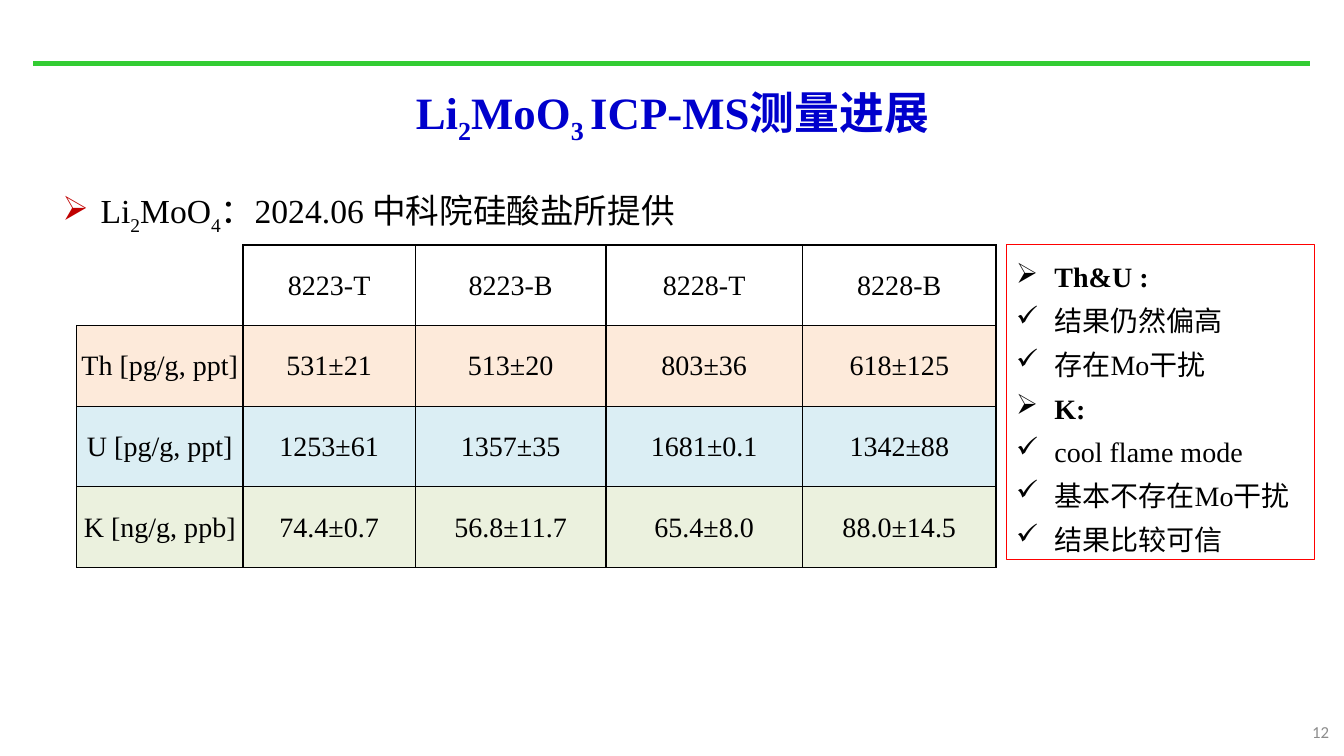
from lxml import etree
from pptx import Presentation
from pptx.dml.color import RGBColor
from pptx.enum.lang import MSO_LANGUAGE_ID as Language
from pptx.enum.shapes import MSO_CONNECTOR as Connector, MSO_SHAPE as Shape
from pptx.enum.text import MSO_ANCHOR as Anchor, MSO_AUTO_SIZE as AutoSize, PP_ALIGN as Align
from pptx.oxml.ns import qn
from pptx.util import Inches, Pt

SERIF = "Times New Roman"
BLACK = RGBColor(0x00, 0x00, 0x00)
BLUE = RGBColor(0x00, 0x00, 0xCC)
GREEN = RGBColor(0x33, 0xCC, 0x33)
RED = RGBColor(0xFF, 0x00, 0x00)
DARK_RED = RGBColor(0xC0, 0x00, 0x00)
GRAY = RGBColor(0x8C, 0x8C, 0x8C)
PEACH = RGBColor(0xFD, 0xEA, 0xDA)
LIGHT_BLUE = RGBColor(0xDB, 0xEE, 0xF4)
LIGHT_GREEN = RGBColor(0xEB, 0xF1, 0xDE)

ARROW, CHECK = "➢", "✓"
COLUMN_WIDTHS = [1.65, 1.71, 1.89, 1.95, 1.92]
ROW_HEIGHT = 0.8
MEASUREMENTS = [
    (None, ["", "8223-T", "8223-B", "8228-T", "8228-B"]),
    (PEACH, ["Th [pg/g, ppt]", "531±21", "513±20", "803±36", "618±125"]),
    (LIGHT_BLUE, ["U [pg/g, ppt]", "1253±61", "1357±35", "1681±0.1", "1342±88"]),
    (LIGHT_GREEN, ["K [ng/g, ppb]", "74.4±0.7", "56.8±11.7", "65.4±8.0", "88.0±14.5"]),
]
FINDINGS = [
    (ARROW, "Th&U :"),
    (CHECK, "结果仍然偏高"),
    (CHECK, "存在Mo干扰"),
    (ARROW, "K:"),
    (CHECK, "cool flame mode"),
    (CHECK, "基本不存在Mo干扰"),
    (CHECK, "结果比较可信"),
]


def style(paragraph, size, color=BLACK, bold=False, name=SERIF):
    font = paragraph.font
    font.name, font.size, font.bold = name, Pt(size), bold
    font.color.rgb = color


def add_runs(paragraph, parts):
    """Every second part is a subscript."""
    for index, text in enumerate(parts):
        run = paragraph.add_run()
        run.text = text
        run.font.language_id = Language.SIMPLIFIED_CHINESE
        if index % 2:
            run._r.get_or_add_rPr().set("baseline", "-25000")


def add_bullet(paragraph, character, color=None):
    paragraph.line_spacing = 1.3
    properties = paragraph._p.get_or_add_pPr()
    properties.set("marL", str(Inches(0.38)))
    properties.set("indent", str(-Inches(0.38)))
    if color is not None:
        bullet_color = etree.SubElement(properties, qn("a:buClr"))
        etree.SubElement(bullet_color, qn("a:srgbClr"), val=str(color))
    etree.SubElement(properties, qn("a:buChar"), char=character)


def add_text_box(slide, left, top, width, height, anchor=Anchor.TOP):
    box = slide.shapes.add_textbox(Inches(left), Inches(top), Inches(width), Inches(height))
    frame = box.text_frame
    frame.word_wrap = True
    frame.vertical_anchor = anchor
    return frame


def add_rule(slide):
    rule = slide.shapes.add_connector(
        Connector.STRAIGHT, Inches(0.33), Inches(0.63), Inches(12.99), Inches(0.63))
    rule.line.color.rgb = GREEN
    rule.line.width = Pt(4)
    etree.SubElement(rule._element.spPr, qn("a:effectLst"))


def add_borders(cell, sides):
    properties = cell._tc.get_or_add_tcPr()
    for side in "LRTB":
        line = etree.SubElement(properties, qn(f"a:ln{side}"), w=str(Pt(1)))
        if side in sides:
            fill = etree.SubElement(line, qn("a:solidFill"))
            etree.SubElement(fill, qn("a:srgbClr"), val=str(BLACK))
        else:
            etree.SubElement(line, qn("a:noFill"))


def fill_cell(cell, text, color):
    add_borders(cell, "LRTB" if text else "RB")
    if color is None:
        cell.fill.background()
    else:
        cell.fill.solid()
        cell.fill.fore_color.rgb = color
    cell.margin_left = cell.margin_right = cell.margin_top = Inches(0.01)
    cell.margin_bottom = 0
    cell.vertical_anchor = Anchor.MIDDLE
    paragraph = cell.text_frame.paragraphs[0]
    paragraph.alignment = Align.CENTER
    style(paragraph, 20)
    if text:
        add_runs(paragraph, [text])


def add_measurements(slide):
    table = slide.shapes.add_table(
        len(MEASUREMENTS), len(COLUMN_WIDTHS), Inches(0.76), Inches(2.43),
        Inches(sum(COLUMN_WIDTHS)), Inches(ROW_HEIGHT * len(MEASUREMENTS))).table
    table.first_row = table.horz_banding = False
    for column, width in zip(table.columns, COLUMN_WIDTHS):
        column.width = Inches(width)
    for row, (color, texts) in zip(table.rows, MEASUREMENTS):
        row.height = Inches(ROW_HEIGHT)
        for cell, text in zip(row.cells, texts):
            fill_cell(cell, text, color)


def add_findings(slide):
    box = slide.shapes.add_shape(
        Shape.RECTANGLE, Inches(9.98), Inches(2.43), Inches(3.06), Inches(3.12))
    box.shadow.inherit = False
    box.fill.background()
    box.line.color.rgb = RED
    box.line.width = Pt(0.75)
    frame = box.text_frame
    frame.word_wrap = True
    frame.auto_size = AutoSize.SHAPE_TO_FIT_TEXT
    frame.vertical_anchor = Anchor.TOP
    for index, (bullet, text) in enumerate(FINDINGS):
        paragraph = frame.add_paragraph() if index else frame.paragraphs[0]
        paragraph.alignment = Align.LEFT
        add_bullet(paragraph, bullet)
        style(paragraph, 20, bold=bullet == ARROW)
        add_runs(paragraph, [text])


def main():
    presentation = Presentation()
    presentation.slide_width, presentation.slide_height = Inches(13.33), Inches(7.5)
    slide = presentation.slides.add_slide(presentation.slide_layouts[6])

    # Rule and title
    add_rule(slide)
    title = add_text_box(slide, 0.67, 0.74, 12, 0.81, Anchor.MIDDLE).paragraphs[0]
    title.alignment = Align.CENTER
    style(title, 32, BLUE, bold=True)
    add_runs(title, ["Li", "2", "MoO", "3 ", "ICP-MS测量进展"])

    # Sample line
    sample_frame = add_text_box(slide, 0.52, 1.7, 8.74, 0.57)
    sample_frame.auto_size = AutoSize.SHAPE_TO_FIT_TEXT
    sample = sample_frame.paragraphs[0]
    add_bullet(sample, ARROW, DARK_RED)
    style(sample, 24)
    add_runs(sample, ["Li", "2", "MoO", "4", "：2024.06 中科院硅酸盐所提供"])

    # Results and findings
    add_measurements(slide)
    add_findings(slide)

    # Page number
    number = add_text_box(slide, 12.18, 7.06, 1.1, 0.4, Anchor.MIDDLE).paragraphs[0]
    number.alignment = Align.RIGHT
    style(number, 12, GRAY, name="Calibri")
    add_runs(number, ["12"])

    presentation.save("out.pptx")


if __name__ == "__main__":
    main()
